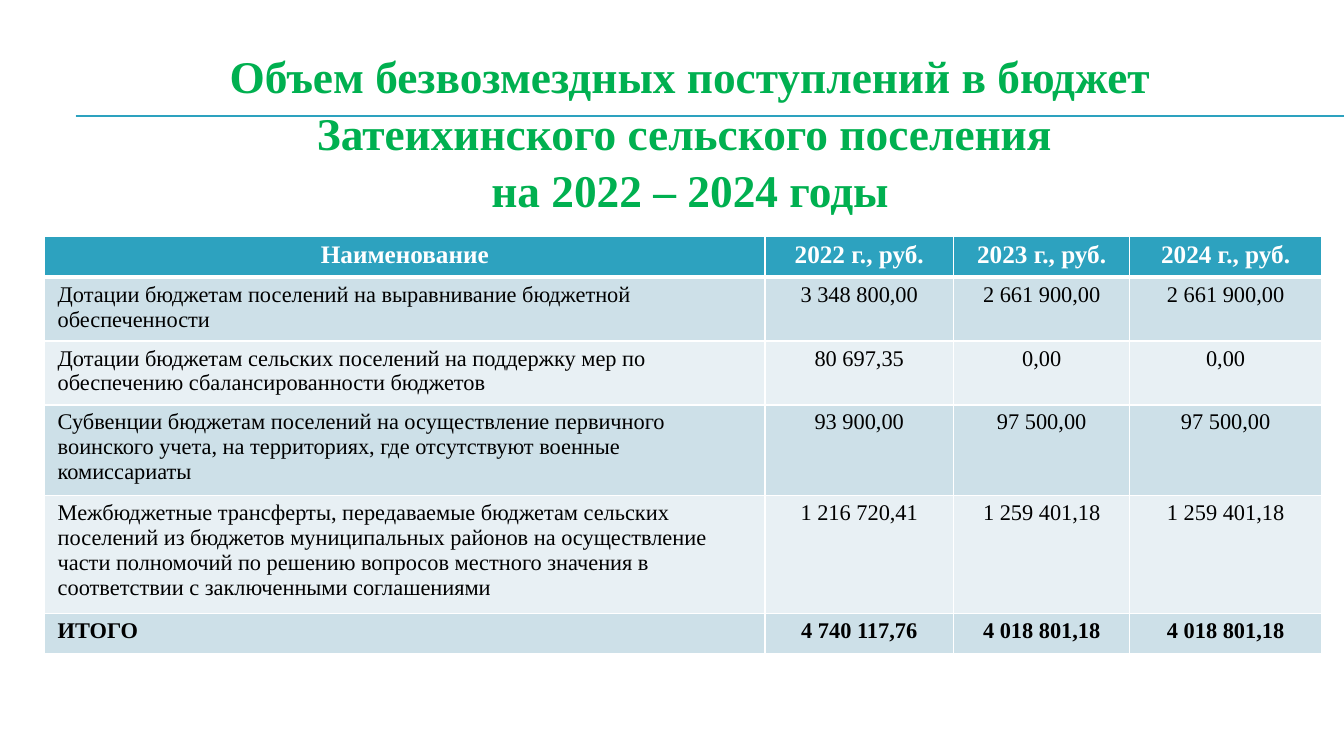
from lxml import etree
from pptx import Presentation
from pptx.dml.color import RGBColor
from pptx.enum.shapes import MSO_CONNECTOR
from pptx.enum.text import MSO_ANCHOR, PP_ALIGN
from pptx.oxml.ns import qn
from pptx.util import Pt

CENTER, LEFT = PP_ALIGN.CENTER, PP_ALIGN.LEFT
MIDDLE, STRAIGHT = MSO_ANCHOR.MIDDLE, MSO_CONNECTOR.STRAIGHT

TITLE = "Объем безвозмездных поступлений в бюджет Затеихинского сельского поселения \nна 2022 – 2024 годы"
REVENUES = [
    ("Наименование", "2022 г., руб.", "2023 г., руб.", "2024 г., руб."),
    ("Дотации бюджетам поселений на выравнивание бюджетной обеспеченности",
     "3 348 800,00", "2 661 900,00", "2 661 900,00"),
    ("Дотации бюджетам сельских поселений на поддержку мер по обеспечению сбалансированности бюджетов",
     "80 697,35", "0,00", "0,00"),
    ("Субвенции бюджетам поселений на осуществление первичного воинского учета, "
     "на территориях, где отсутствуют военные комиссариаты",
     "93 900,00", "97 500,00", "97 500,00"),
    ("Межбюджетные трансферты, передаваемые бюджетам сельских поселений из бюджетов "
     "муниципальных районов на осуществление части полномочий по решению вопросов "
     "местного значения в соответствии с заключенными соглашениями",
     "1 216 720,41", "1 259 401,18", "1 259 401,18"),
    ("ИТОГО", "4 740 117,76", "4 018 801,18", "4 018 801,18"),
]
THEME = {
    "font": "Times New Roman", "title_size": 32.4, "head_size": 18, "body_size": 16,
    "title": "00B050", "accent": "2DA2BF", "white": "FFFFFF", "black": "000000",
    "bands": ("CDE0E8", "E8F0F4"),
}
SLIDE_WIDTH, SLIDE_HEIGHT = 960, 540
COLUMN_WIDTHS = (514.6, 134.6, 126, 136.8)
ROW_HEIGHTS = (29.2, 42.8, 42.8, 60.7, 78.3, 29.2)
CELL_MARGINS = {"margin_left": Pt(9.36), "margin_right": Pt(9.36),
                "margin_top": Pt(3.6), "margin_bottom": Pt(3.6)}


def rgb(name):
    return RGBColor.from_string(THEME[name] if name in THEME else name)


def apply(target, values):
    for key, value in values.items():
        setattr(target, key, value)


def write(paragraph, text, size, color, bold, align):
    paragraph.text = text
    paragraph.alignment = align
    for run in paragraph.runs:
        apply(run.font, {"name": THEME["font"], "size": Pt(size), "bold": bold})
        run.font.color.rgb = rgb(color)


def add_border(cell, edge, width):
    line = etree.Element(qn("a:" + edge), w=str(Pt(width)))
    fill = etree.SubElement(line, qn("a:solidFill"))
    etree.SubElement(fill, qn("a:srgbClr"), val=THEME["white"])
    return line


def add_rules(slide):
    for y in (82.8, 83.5):
        rule = slide.shapes.add_connector(STRAIGHT, Pt(54), Pt(y), Pt(SLIDE_WIDTH), Pt(y))
        rule.line.width = Pt(0.75)
        rule.line.color.rgb = rgb("accent")
        etree.SubElement(rule._element.spPr, qn("a:effectLst"))


def add_title(slide):
    title = slide.shapes.add_textbox(Pt(53.3), Pt(35.3), Pt(879.1), Pt(116.6)).text_frame
    apply(title, {"word_wrap": True, "vertical_anchor": MIDDLE})
    heading = title.paragraphs[0]
    write(heading, TITLE, THEME["title_size"], "title", True, CENTER)
    heading.line_spacing = 1.05


def add_revenues(slide):
    table = slide.shapes.add_table(
        len(REVENUES), len(COLUMN_WIDTHS), Pt(31.9), Pt(168.8),
        Pt(sum(COLUMN_WIDTHS)), Pt(sum(ROW_HEIGHTS))).table
    for column, width in zip(table.columns, COLUMN_WIDTHS):
        column.width = Pt(width)
    for row, height in zip(table.rows, ROW_HEIGHTS):
        row.height = Pt(height)
    last = len(REVENUES) - 1
    for r, values in enumerate(REVENUES):
        head = r == 0
        size = THEME["head_size" if head else "body_size"]
        color = "white" if head else "black"
        band = "accent" if head else THEME["bands"][(r - 1) % 2]
        edges = {"lnL": 1, "lnR": 1, "lnT": 3 if r == 1 else 1, "lnB": 3 if head else 1}
        for c, value in enumerate(values):
            cell = table.cell(r, c)
            apply(cell, CELL_MARGINS)
            align = CENTER if head or c else LEFT
            write(cell.text_frame.paragraphs[0], value, size, color, r in (0, last), align)
            cell.fill.solid()
            cell.fill.fore_color.rgb = rgb(band)
            properties = cell._tc.get_or_add_tcPr()
            for position, (edge, width) in enumerate(edges.items()):
                properties.insert(position, add_border(cell, edge, width))


def main():
    deck = Presentation()
    apply(deck, {"slide_width": Pt(SLIDE_WIDTH), "slide_height": Pt(SLIDE_HEIGHT)})
    slide = deck.slides.add_slide(deck.slide_layouts[6])
    add_rules(slide)
    add_title(slide)
    add_revenues(slide)
    deck.save("out.pptx")


if __name__ == "__main__":
    main()
